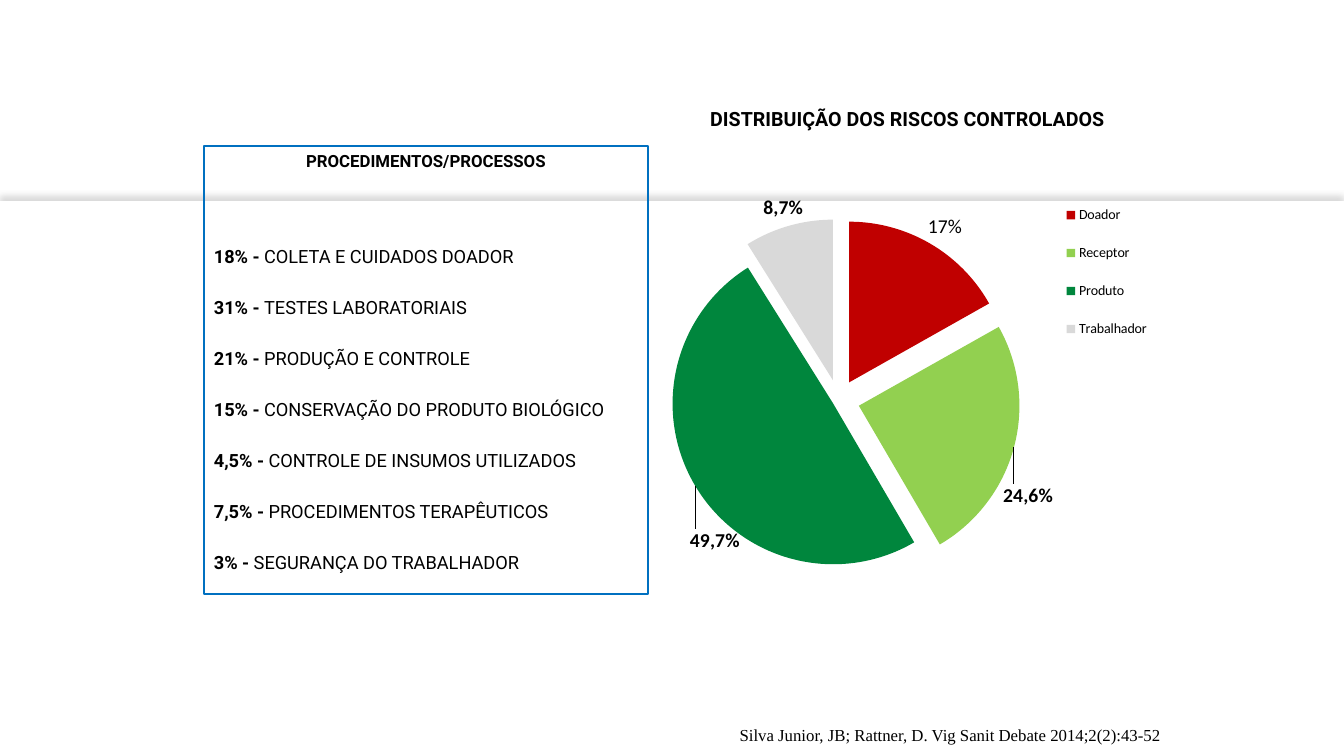
"""Build the slide on controlled risks: a list of procedures beside a pie chart."""
from lxml.etree import SubElement
from pptx import Presentation
from pptx.chart.data import CategoryChartData
from pptx.dml.color import RGBColor
from pptx.enum.chart import XL_CHART_TYPE as ChartType
from pptx.enum.chart import XL_LABEL_POSITION as LabelPosition
from pptx.enum.chart import XL_LEGEND_POSITION as LegendPosition
from pptx.enum.shapes import MSO_SHAPE as Shape
from pptx.enum.text import MSO_ANCHOR as Anchor
from pptx.enum.text import PP_ALIGN as Align
from pptx.oxml.ns import qn
from pptx.oxml.xmlchemy import OxmlElement
from pptx.util import Emu, Pt

PX_PER_INCH = 100.8
BLACK = RGBColor(0, 0, 0)
WHITE = RGBColor(255, 255, 255)
BLUE = RGBColor(0x00, 0x70, 0xC0)
RED = RGBColor(0xC0, 0x00, 0x00)
LIME = RGBColor(0x92, 0xD0, 0x50)
GREEN = RGBColor(0x00, 0x86, 0x3D)
GREY = RGBColor(0xD9, 0xD9, 0xD9)

PROCEDURES = [
    ("18% - ", "COLETA E CUIDADOS DOADOR"),
    ("31% - ", "TESTES LABORATORIAIS"),
    ("21% - ", "PRODUÇÃO E CONTROLE"),
    ("15% - ", "CONSERVAÇÃO DO PRODUTO BIOLÓGICO"),
    ("4,5% - ", "CONTROLE DE INSUMOS UTILIZADOS"),
    ("7,5% - ", "PROCEDIMENTOS TERAPÊUTICOS"),
    ("3% - ", "SEGURANÇA DO TRABALHADOR"),
]
RISKS = [
    ("Doador", 17, "17%", RED, 13, (-0.01, 0)),
    ("Receptor", 25, "24,6%", LIME, 13, (-0.03, 0.07)),
    ("Produto", 50, "49,7%", GREEN, 4, (0.09, 0.08)),
    ("Trabalhador", 9, "8,7%", GREY, 13, (0.03, 0)),
]


def px(length):
    return Emu(round(length * 914400 / PX_PER_INCH))


def frame(*lengths):
    return [px(length) for length in lengths]


def style(font, size, name, bold=False):
    font.size, font.name, font.bold = Pt(size), name, bold
    font.color.rgb = BLACK


def add_panel(slide, box):
    panel = slide.shapes.add_shape(Shape.RECTANGLE, *frame(*box))
    panel.shadow.inherit = False
    panel.fill.solid()
    panel.fill.fore_color.rgb = WHITE
    panel.line.fill.background()
    effects = panel._element.spPr.find(qn("a:effectLst"))
    shadow = SubElement(effects, qn("a:outerShdw"), blurRad=str(Pt(5)),
                        dist=str(Pt(3)), dir="16200000")
    tint = SubElement(shadow, qn("a:srgbClr"), val="A6A6A6")
    SubElement(tint, qn("a:alpha"), val="42000")


def add_line_of_text(slide, box, text, size, name, align, bold=False):
    caption = slide.shapes.add_textbox(*frame(*box)).text_frame
    caption.word_wrap = True
    caption.text = text
    caption.paragraphs[0].alignment = align
    style(caption.paragraphs[0].runs[0].font, size, name, bold)


def add_procedures(slide, box):
    outline = slide.shapes.add_shape(Shape.RECTANGLE, *frame(*box))
    outline.shadow.inherit = False
    outline.fill.background()
    outline.line.color.rgb = BLUE
    outline.line.width = Pt(1.5)
    listing = outline.text_frame
    listing.word_wrap = True
    listing.vertical_anchor = Anchor.TOP
    listing.text = "PROCEDIMENTOS/PROCESSOS"
    heading = listing.paragraphs[0]
    heading.alignment = Align.CENTER
    style(heading.runs[0].font, 12, "Roboto", True)
    for index, (share, procedure) in enumerate(PROCEDURES):
        item = listing.add_paragraph()
        item.alignment = Align.JUSTIFY
        item.space_before = Pt(20.8 if index else 52.8)
        for text, bold in ((share, True), (procedure, False)):
            run = item.add_run()
            run.text = text
            style(run.font, 13, "Roboto", bold)


def make_layout(edges=(), **values):
    layout = OxmlElement("c:layout")
    manual = SubElement(layout, qn("c:manualLayout"))
    for tag, value in list(edges) + list(values.items()):
        SubElement(manual, qn(f"c:{tag}"), val=str(value))
    return layout


def make_explosion(percent):
    explosion = OxmlElement("c:explosion")
    explosion.set("val", str(percent))
    return explosion


def style_slice(series, index, label, color, offset, shift):
    point = series.points[index]
    point.format.fill.solid()
    point.format.fill.fore_color.rgb = color
    point.format.line.fill.background()
    part = series._element.findall(qn("c:dPt"))[index]
    part.find(qn("c:spPr")).addprevious(make_explosion(offset))
    caption = point.data_label
    caption.text_frame.text = label
    style(caption.text_frame.paragraphs[0].runs[0].font, 14, "Calibri", index > 0)
    caption.position = LabelPosition.OUTSIDE_END
    holder = series._element.findall(".//" + qn("c:dLbl"))[index]
    holder.find(qn("c:idx")).addnext(make_layout(x=shift[0], y=shift[1]))


def add_risk_pie(slide, box):
    data = CategoryChartData()
    data.categories = [risk[0] for risk in RISKS]
    data.add_series("Series 1", [risk[1] for risk in RISKS])
    chart = slide.shapes.add_chart(ChartType.PIE, *frame(*box), data).chart
    chart.has_title = False
    style(chart.font, 10, "Calibri")
    chart.has_legend = True
    chart.legend.position = LegendPosition.RIGHT
    chart.legend.include_in_layout = False
    plot = chart.plots[0]
    plot.vary_by_categories = True
    series = plot.series[0]
    for index, (_, _, label, color, offset, shift) in enumerate(RISKS):
        style_slice(series, index, label, color, offset, shift)
    series._element.find(qn("c:dPt")).addprevious(make_explosion(26))

    edges = [("xMode", "edge"), ("yMode", "edge")]
    area = chart._chartSpace.chart.plotArea
    for old in area.findall(qn("c:layout")):
        area.remove(old)
    inner = [("layoutTarget", "inner")] + edges
    area.insert(0, make_layout(inner, x=0.05, y=0.02, w=0.74, h=0.97))
    legend = chart.legend._element
    for old in legend.findall(qn("c:layout")):
        legend.remove(old)
    legend.find(qn("c:legendPos")).addnext(make_layout(edges, x=0.82, y=0.06, w=0.18, h=0.36))


def main():
    deck = Presentation()
    deck.slide_width, deck.slide_height = frame(1344, 756)
    slide = deck.slides.add_slide(deck.slide_layouts[6])
    add_panel(slide, (0, 201, 1344, 555))
    add_risk_pie(slide, (609, 156, 547, 484))
    add_line_of_text(slide, (683, 102, 449, 34), "DISTRIBUIÇÃO DOS RISCOS CONTROLADOS",
                     14, "Roboto", Align.CENTER, True)
    add_procedures(slide, (204, 146, 444, 448))
    add_line_of_text(slide, (163, 720, 1008, 30),
                     "Silva Junior, JB; Rattner, D. Vig Sanit Debate 2014;2(2):43-52",
                     12, "Times New Roman", Align.RIGHT)
    deck.save("out.pptx")


if __name__ == "__main__":
    main()
